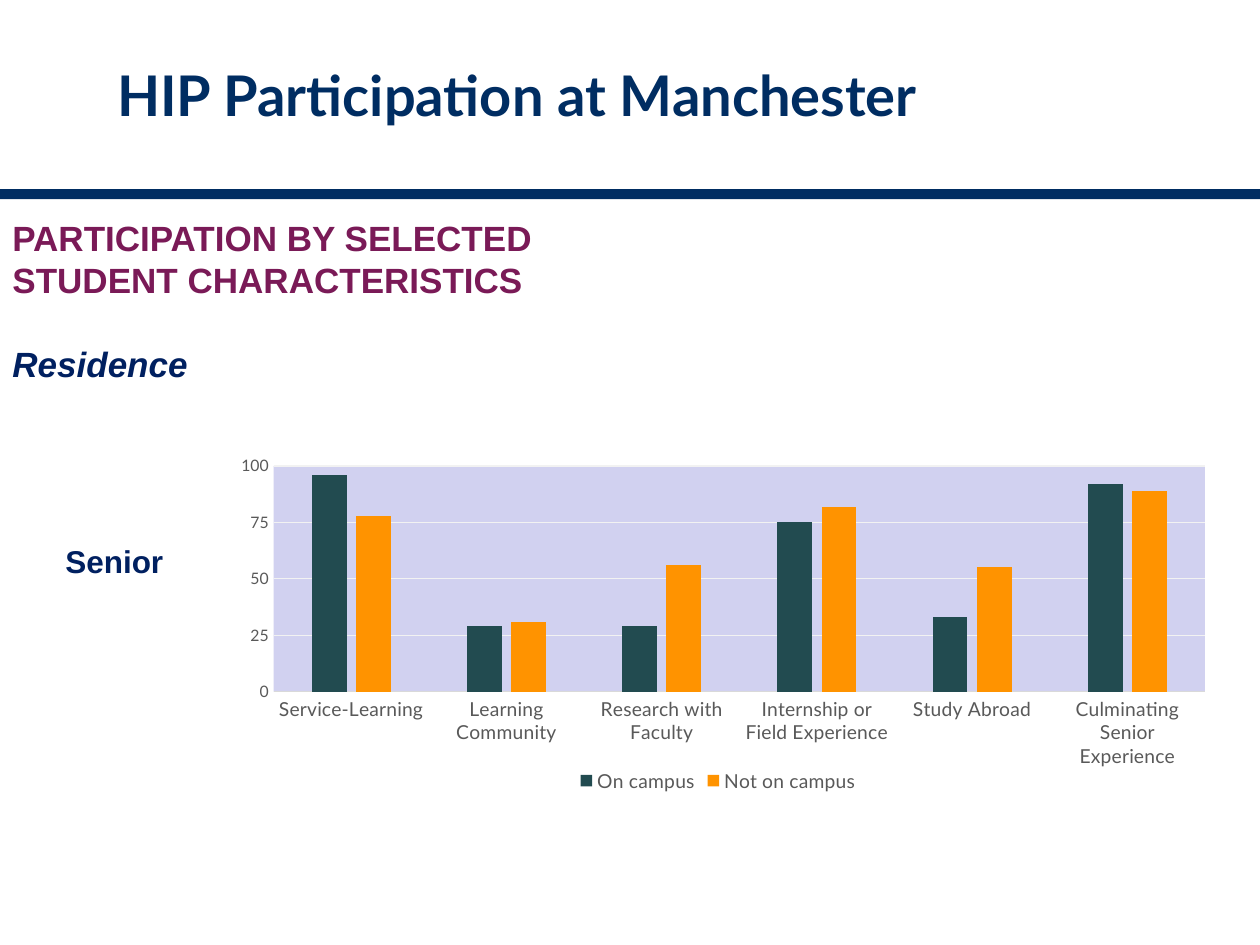
from lxml import etree
from pptx import Presentation
from pptx import util as u
from pptx.chart.data import CategoryChartData
from pptx.dml.color import RGBColor
from pptx.enum import chart as ch, shapes, text
from pptx.oxml import parse_xml
from pptx.oxml.ns import nsdecls, qn

COLORS = {
    "navy": "002D62", "blue": "002060", "plum": "7A1A57", "grey": "595959",
    "axis": "D9D9D9", "grid": "F2F2F2", "plot": "D1D1F0", "white": "FFFFFF",
    "teal": "224B50", "orange": "FF9300",
}
CATEGORIES = ["Service-Learning", "Learning Community", "Research with Faculty",
              "Internship or Field Experience", "Study Abroad",
              "Culminating Senior Experience"]
SERIES = [("On campus", (96, 29, 29, 75, 33, 92), "teal"),
          ("Not on campus", (78, 31, 56, 82, 55, 89), "orange")]
PLOT_LAYOUT = {"x": 0.08, "y": 0.06, "w": 0.88, "h": 0.64}


def rgb(name):
    return RGBColor.from_string(COLORS[name])


def style_font(font, size, color, name="Lato", bold=False, italic=False):
    font.size, font.name = u.Pt(size), name
    font.bold, font.italic = bold, italic
    font.color.rgb = rgb(color)


def write(p, content, before=0, **fmt):
    if before:
        p.space_before = u.Pt(before)
    r = p.add_run()
    r.text = content
    style_font(r.font, **fmt)


def solid_fill(color):
    return parse_xml(
        f'<c:spPr {nsdecls("c", "a")}><a:solidFill><a:srgbClr val="{COLORS[color]}"/>'
        "</a:solidFill><a:ln><a:noFill/></a:ln></c:spPr>")


class Deck:
    def __init__(self):
        self.prs = Presentation()
        self.prs.slide_width, self.prs.slide_height = u.Inches(10), u.Inches(7.5)
        self.s = self.prs.slides.add_slide(self.prs.slide_layouts[5])

    def box(self, *at):
        return [u.Inches(v) for v in at]

    def title(self, content, at):
        sp = self.s.shapes.title
        sp.left, sp.top, sp.width, sp.height = self.box(*at)
        tf = sp.text_frame
        tf.vertical_anchor = text.MSO_ANCHOR.MIDDLE
        p = tf.paragraphs[0]
        p.alignment = text.PP_ALIGN.LEFT
        write(p, content, size=32, color="navy", bold=True)

    def bar(self, at):
        sp = self.s.shapes.add_shape(shapes.MSO_SHAPE.RECTANGLE, *self.box(*at))
        sp.shadow.inherit = False
        sp.fill.solid()
        sp.fill.fore_color.rgb = rgb("navy")
        sp.line.fill.background()

    def text(self, at, *items):
        tf = self.s.shapes.add_textbox(*self.box(*at)).text_frame
        tf.word_wrap = True
        for i, (content, fmt) in enumerate(items):
            p = tf.add_paragraph() if i else tf.paragraphs[0]
            write(p, content, name="Arial", bold=True, **fmt)

    def column_chart(self, at):
        data = CategoryChartData(number_format="0")
        data.categories = CATEGORIES
        for name, values, _ in SERIES:
            data.add_series(name, values)
        chart = self.s.shapes.add_chart(
            ch.XL_CHART_TYPE.COLUMN_CLUSTERED, *self.box(*at), data).chart
        style_font(chart.font, 10, "grey")
        chart.has_title = False
        chart.has_legend = True
        chart.legend.position = ch.XL_LEGEND_POSITION.BOTTOM
        chart.legend.include_in_layout = False
        style_font(chart.legend.font, 11, "grey")

        plot = chart.plots[0]
        plot.gap_width, plot.overlap, plot.vary_by_categories = 219, -27, False
        for series, (_, _, color) in zip(plot.series, SERIES):
            series.format.fill.solid()
            series.format.fill.fore_color.rgb = rgb(color)

        for axis, size in ((chart.category_axis, 11), (chart.value_axis, 9)):
            axis.major_tick_mark = axis.minor_tick_mark = ch.XL_TICK_MARK.NONE
            style_font(axis.tick_labels.font, size, "grey")
        values = chart.value_axis
        values.minimum_scale, values.maximum_scale, values.major_unit = 0, 100, 25
        values.tick_labels.number_format = "0"
        values.tick_labels.number_format_is_linked = False
        values.format.line.fill.background()
        for line, color in ((chart.category_axis.format.line, "axis"),
                            (values.major_gridlines.format.line, "grid")):
            line.color.rgb, line.width = rgb(color), u.Pt(0.75)
        self.chart_areas(chart)

    def chart_areas(self, chart):
        root = chart.element
        area = root.find(".//" + qn("c:plotArea"))
        for old in area.findall(qn("c:layout")):
            area.remove(old)
        layout = parse_xml(f'<c:layout {nsdecls("c")}><c:manualLayout/></c:layout>')
        settings = {"layoutTarget": "inner", "xMode": "edge", "yMode": "edge", **PLOT_LAYOUT}
        for tag, value in settings.items():
            etree.SubElement(layout[0], qn("c:" + tag)).set("val", str(value))
        area.insert(0, layout)
        area.append(solid_fill("plot"))
        root.find(qn("c:chart")).addnext(solid_fill("white"))


def main():
    deck = Deck()
    deck.bar((0, 1.5, 10, 0.08))
    deck.title("HIP Participation at Manchester", (0.83, 0.12, 8.83, 1.25))
    deck.text((0, 1.67, 4.92, 1.78),
              ("PARTICIPATION BY SELECTED STUDENT CHARACTERISTICS",
               dict(size=20, color="plum")),
              ("Residence", dict(size=20, color="blue", italic=True, before=24)))
    deck.text((0.42, 4.25, 1.12, 0.4), ("Senior", dict(size=18, color="blue")))
    deck.column_chart((1.5, 3.53, 8.4, 2.8))
    deck.prs.save("out.pptx")


if __name__ == "__main__":
    main()
